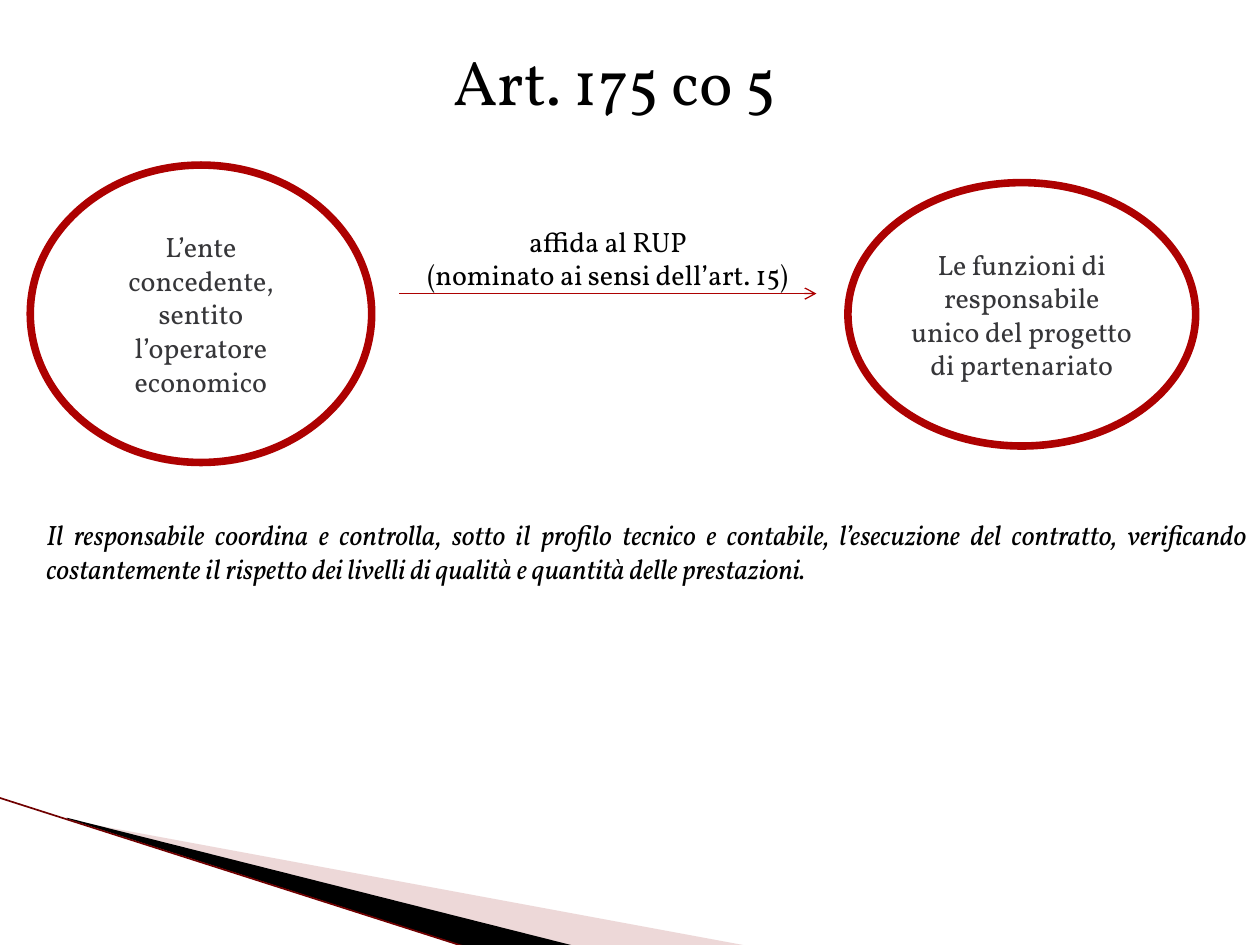
from lxml import etree
from pptx import Presentation
from pptx.dml.color import RGBColor
from pptx.enum.shapes import MSO_CONNECTOR, MSO_SHAPE
from pptx.enum.text import MSO_ANCHOR, PP_ALIGN
from pptx.oxml.ns import qn
from pptx.util import Inches, Pt

LEFT, CENTER, JUSTIFY = PP_ALIGN.LEFT, PP_ALIGN.CENTER, PP_ALIGN.JUSTIFY
TOP, MIDDLE = MSO_ANCHOR.TOP, MSO_ANCHOR.MIDDLE
OVAL, STRAIGHT = MSO_SHAPE.OVAL, MSO_CONNECTOR.STRAIGHT

THEME = {
    "font": "Vollkorn", "title": 36, "body": 16,
    "ink": "000000", "muted": "363639", "paper": "FFFFFF",
    "accent": "AD0101", "blush": "D29E9E", "edge": "700000",
    "ring": 4.33, "arrow": 0.75, "edge_width": 0.95,
}
WIDTH, HEIGHT = Inches(10), Inches(7.5)

# All places are percentages of the slide's width and height.
TITLE = ("Art. 175 co 5", (35, 3.87, 29.7, 9.47))
NOTE = (
    "Il responsabile coordina e controlla, sotto il profilo tecnico e contabile, "
    "l’esecuzione del contratto, verificando costantemente il rispetto dei livelli "
    "di qualità e quantità delle prestazioni.",
    (2.7, 54.13, 97.3, 8.53),
)
ACTION = ("affida al RUP\n(nominato ai sensi dell’art. 15)", (30.2, 23.07, 36.1, 8.53))
PARTIES = [
    ("L’ente concedente, sentito l’operatore economico", (2.4, 17.47, 27.1, 31.47)),
    ("Le funzioni di responsabile unico del progetto di partenariato",
     (67.3, 19.33, 27.6, 27.87)),
]
ARROW = ((31.7, 31.07), (64.8, 31.07))
WEDGES = [
    ("blush", 40, [(5.5, 86.8), (59.5, 100.13), (45.6, 100.13), (5.5, 86.67)]),
    ("ink", 100, [(5.3, 86.53), (45.7, 100.13), (37.2, 100.27), (5.4, 86.67)]),
]
WEDGE_EDGE = ((-0.1, 84.4), (37.1, 100.27))


def place(across, down):
    return round(WIDTH * across / 100), round(HEIGHT * down / 100)


def frame(area):
    return *place(*area[:2]), *place(*area[2:])


def color(name):
    return RGBColor.from_string(THEME[name])


def write(box, text, size="body", ink="ink", align=CENTER, anchor=TOP, wrap=True):
    text_frame = box.text_frame
    text_frame.text = text
    text_frame.word_wrap = wrap
    text_frame.vertical_anchor = anchor
    for para in text_frame.paragraphs:
        para.alignment = align
        for span in para.runs:
            span.font.name = THEME["font"]
            span.font.size = Pt(THEME[size])
            span.font.color.rgb = color(ink)
            span.font.italic = align == JUSTIFY


def add_text(page, text, area, **style):
    write(page.shapes.add_textbox(*frame(area)), text, **style)


def add_party(page, text, area):
    oval = page.shapes.add_shape(OVAL, *frame(area))
    oval.shadow.inherit = False
    oval.fill.solid()
    oval.fill.fore_color.rgb = color("paper")
    oval.line.color.rgb = color("accent")
    oval.line.width = Pt(THEME["ring"])
    write(oval, text, ink="muted", anchor=MIDDLE)


def add_line(page, ends, ink, width, arrow=False):
    start, end = ends
    line = page.shapes.add_connector(STRAIGHT, *place(*start), *place(*end))
    line.line.color.rgb = color(ink)
    line.line.width = Pt(THEME[width])
    properties = line._element.spPr
    if arrow:
        etree.SubElement(properties.find(qn("a:ln")), qn("a:tailEnd"), type="arrow")
    etree.SubElement(properties, qn("a:effectLst"))


def add_wedge(page, ink, opacity, corners):
    points = [place(*corner) for corner in corners]
    builder = page.shapes.build_freeform(*points[0])
    builder.add_line_segments(points[1:], close=True)
    wedge = builder.convert_to_shape()
    wedge.shadow.inherit = False
    wedge.fill.solid()
    wedge.fill.fore_color.rgb = color(ink)
    wedge.line.fill.background()
    if opacity < 100:
        tint = wedge._element.spPr.find(qn("a:solidFill"))[0]
        etree.SubElement(tint, qn("a:alpha"), val=str(opacity * 1000))


def main():
    deck = Presentation()
    deck.slide_width, deck.slide_height = WIDTH, HEIGHT
    page = deck.slides.add_slide(deck.slide_layouts[6])
    page.background.fill.solid()
    page.background.fill.fore_color.rgb = color("paper")

    for wedge in WEDGES:
        add_wedge(page, *wedge)
    add_line(page, WEDGE_EDGE, "edge", "edge_width")
    add_text(page, *TITLE, size="title", align=LEFT, wrap=False)
    add_text(page, *NOTE, align=JUSTIFY)
    for party in PARTIES:
        add_party(page, *party)
    add_line(page, ARROW, "accent", "arrow", arrow=True)
    add_text(page, *ACTION)
    deck.save("out.pptx")


if __name__ == "__main__":
    main()
